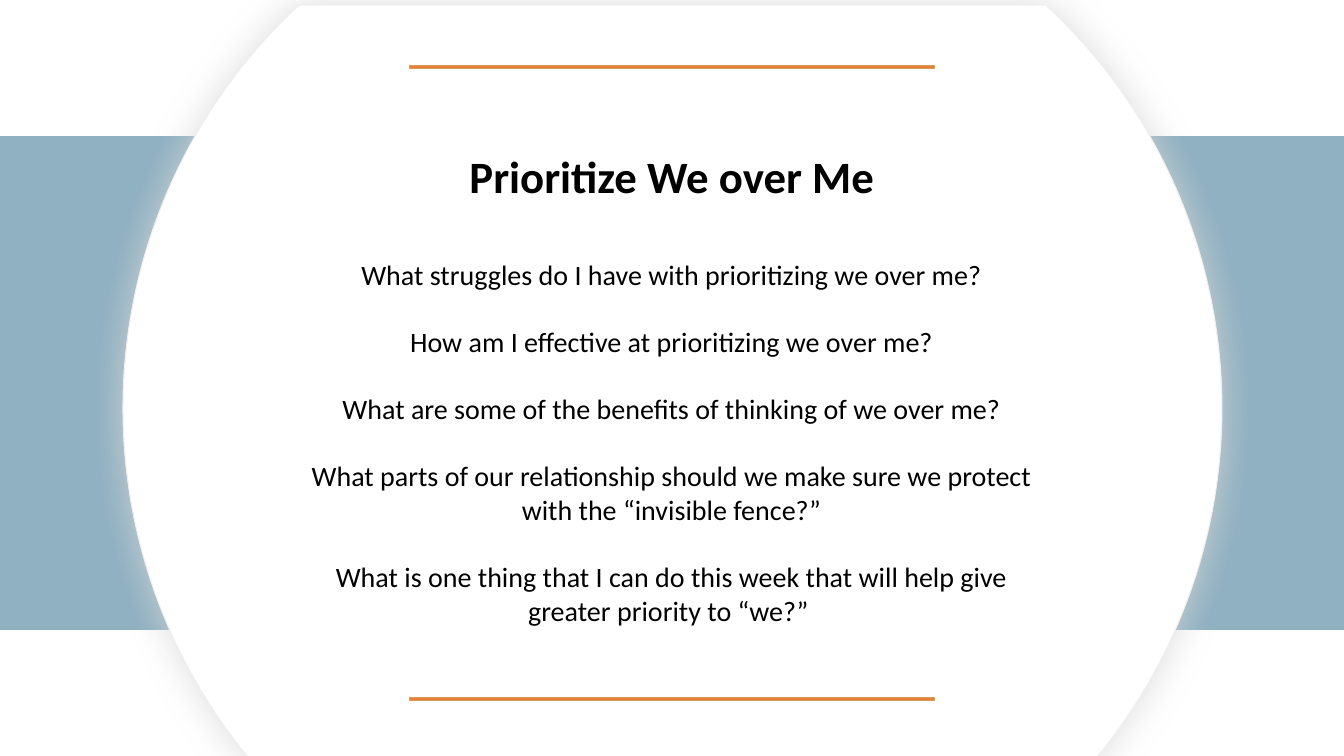
"""Build the "Prioritize We over Me" discussion slide."""
import math
from dataclasses import dataclass

import lxml.etree
import pptx
import pptx.dml.color
import pptx.enum.shapes
import pptx.enum.text
import pptx.oxml
import pptx.oxml.ns
import pptx.shapes.autoshape
import pptx.slide
import pptx.util

Inches = pptx.util.Inches
RGBColor = pptx.dml.color.RGBColor
qn = pptx.oxml.ns.qn

BLACK = RGBColor(0x00, 0x00, 0x00)
WHITE = RGBColor(0xFF, 0xFF, 0xFF)
BLUE = RGBColor(0x90, 0xB1, 0xC2)
ORANGE = RGBColor(0xED, 0x7D, 0x31)
ORANGE_EDGE = RGBColor(0xD0, 0x9D, 0x5C)
PALE_GREY = RGBColor(0xEF, 0xEF, 0xEF)
SHADOW_GREY = RGBColor(0xD8, 0xD8, 0xD8)

SLIDE_WIDTH, SLIDE_HEIGHT = 13.33, 7.5
CENTER_X, CENTER_Y, RADIUS = 6.67, 4.05, 5.45
DISC_TOP, DISC_BOTTOM = 0.05, 7.55


@dataclass(frozen=True)
class Bar:
    left: float
    top: float
    width: float
    height: float
    fill: RGBColor
    line: RGBColor


@dataclass(frozen=True)
class TextBlock:
    left: float
    top: float
    width: float
    height: float
    size: int
    bold: bool
    paragraphs: tuple[str, ...]


BAND = Bar(0, 1.35, SLIDE_WIDTH, 4.9, BLUE, BLUE)
RULES = [Bar(4.06, top, 5.21, 0.03, ORANGE, ORANGE_EDGE) for top in (0.65, 6.92)]
TITLE = TextBlock(3.5, 1.38, 6.33, 0.73, 32, True, ("Prioritize We over Me",))
QUESTIONS = TextBlock(2.97, 2.65, 7.38, 3.47, 20, False, (
    "What struggles do I have with prioritizing we over me?",
    "How am I effective at prioritizing we over me?",
    "What are some of the benefits of thinking of we over me?",
    "What parts of our relationship should we make sure we protect with the “invisible fence?”",
    "What is one thing that I can do this week that will help give greater priority to “we?” ",
))


def paint(shape: pptx.shapes.autoshape.Shape, fill: RGBColor, line: RGBColor) -> None:
    shape.shadow.inherit = False
    shape.fill.solid()
    shape.fill.fore_color.rgb = fill
    shape.line.color.rgb = line
    shape.line.width = pptx.util.Pt(0.75)


def add_bar(slide: pptx.slide.Slide, bar: Bar) -> None:
    shape = slide.shapes.add_shape(
        pptx.enum.shapes.MSO_SHAPE.RECTANGLE,
        Inches(bar.left), Inches(bar.top), Inches(bar.width), Inches(bar.height),
    )
    paint(shape, bar.fill, bar.line)


def add_soft_shadow(
    shape: pptx.shapes.autoshape.Shape, color: RGBColor, blur: float, opacity: int
) -> None:
    effects = shape.element.spPr.find(qn("a:effectLst"))
    shadow = lxml.etree.SubElement(
        effects, qn("a:outerShdw"),
        blurRad=str(pptx.util.Pt(blur)), dist="0", dir="0", algn="ctr", rotWithShape="0",
    )
    shade = lxml.etree.SubElement(shadow, qn("a:srgbClr"), val=str(color))
    lxml.etree.SubElement(shade, qn("a:alpha"), val=str(opacity * 1000))


def disc_point(angle: float, handle: float = 0) -> tuple[int, int]:
    x = CENTER_X + RADIUS * (math.cos(angle) - handle * math.sin(angle))
    y = CENTER_Y + RADIUS * (math.sin(angle) + handle * math.cos(angle))
    return Inches(x), Inches(y)


def add_cut_disc(slide: pptx.slide.Slide) -> None:
    upper = math.asin((DISC_TOP - CENTER_Y) / RADIUS)
    lower = math.asin((DISC_BOTTOM - CENTER_Y) / RADIUS)
    angles = [upper, 0, lower, math.pi - lower, math.pi, math.pi - upper]
    corners = [disc_point(angle) for angle in angles]
    builder = slide.shapes.build_freeform(*corners[0])
    builder.add_line_segments(corners[1:], close=True)
    disc = builder.convert_to_shape()
    segments = list(disc.element.iter(qn("a:lnTo")))
    for index in (0, 1, 3, 4):
        start, end = angles[index:index + 2]
        handle = 4 / 3 * math.tan((end - start) / 4)
        curve = lxml.etree.Element(qn("a:cubicBezTo"))
        for x, y in (disc_point(start, handle), disc_point(end, -handle), disc_point(end)):
            lxml.etree.SubElement(curve, qn("a:pt"), x=str(x - disc.left), y=str(y - disc.top))
        segments[index].getparent().replace(segments[index], curve)
    paint(disc, WHITE, PALE_GREY)
    add_soft_shadow(disc, SHADOW_GREY, 26, 85)


def add_text(slide: pptx.slide.Slide, block: TextBlock) -> None:
    box = slide.shapes.add_textbox(
        Inches(block.left), Inches(block.top), Inches(block.width), Inches(block.height)
    )
    frame = box.text_frame
    frame.word_wrap = True
    frame.vertical_anchor = pptx.enum.text.MSO_ANCHOR.MIDDLE
    for index, text in enumerate(block.paragraphs):
        paragraph = frame.add_paragraph() if index else frame.paragraphs[0]
        paragraph.alignment = pptx.enum.text.PP_ALIGN.CENTER
        if index:
            paragraph.space_before = pptx.util.Pt(24)
        run = paragraph.add_run()
        run.text = text
        run.font.name = "Calibri"
        run.font.size = pptx.util.Pt(block.size)
        run.font.bold = block.bold
        run.font.color.rgb = BLACK


def main() -> None:
    presentation = pptx.Presentation()
    presentation.slide_width = Inches(SLIDE_WIDTH)
    presentation.slide_height = Inches(SLIDE_HEIGHT)
    slide = presentation.slides.add_slide(presentation.slide_layouts[6])
    add_bar(slide, BAND)
    add_cut_disc(slide)
    add_text(slide, TITLE)
    for rule in RULES:
        add_bar(slide, rule)
    add_text(slide, QUESTIONS)
    presentation.save("out.pptx")


if __name__ == "__main__":
    main()
